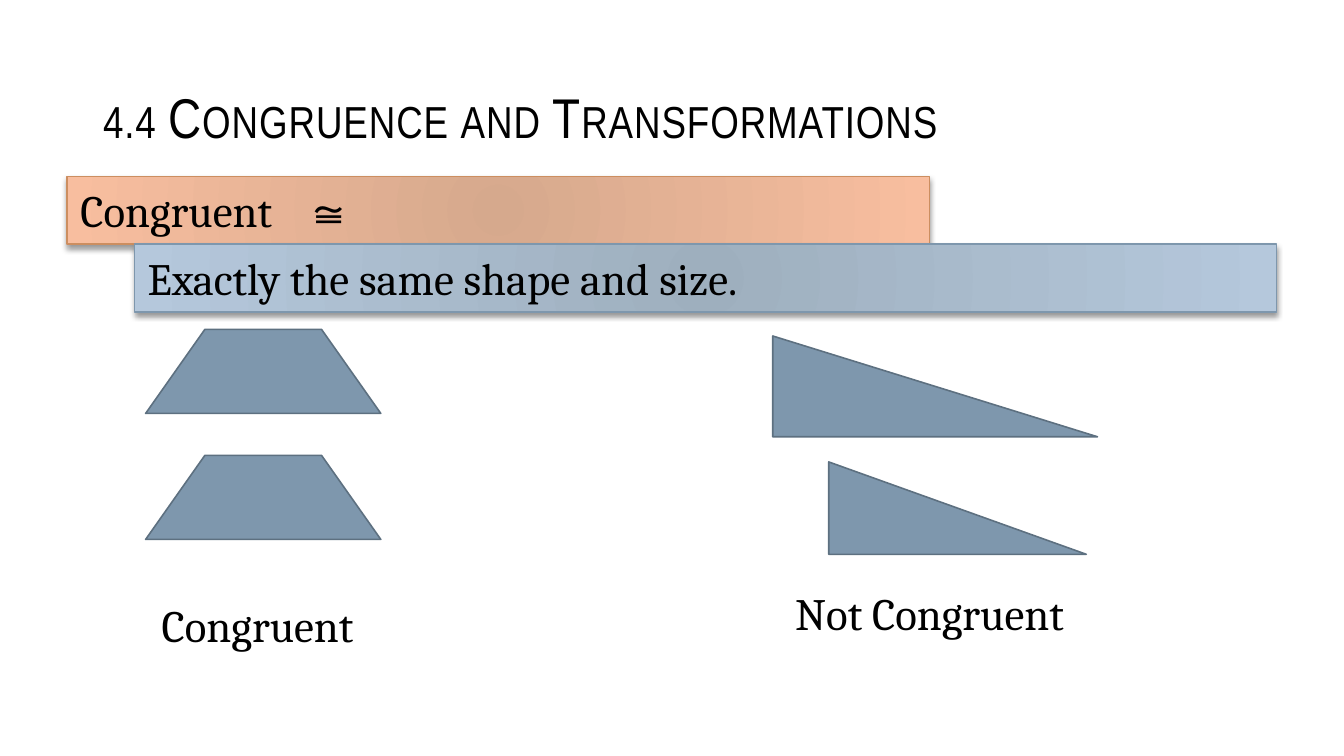
"""Build a slide that defines congruence with matching and non-matching shapes."""
from lxml import etree
from pptx import Presentation
from pptx.dml.color import RGBColor
from pptx.enum.shapes import MSO_SHAPE
from pptx.enum.text import MSO_ANCHOR, MSO_AUTO_SIZE, PP_ALIGN
from pptx.oxml.ns import qn
from pptx.util import Pt

RECTANGLE = MSO_SHAPE.RECTANGLE
TRAPEZOID = MSO_SHAPE.TRAPEZOID
TRIANGLE = MSO_SHAPE.RIGHT_TRIANGLE
LEFT, CENTER = PP_ALIGN.LEFT, PP_ALIGN.CENTER
TOP, MIDDLE, BOTTOM = MSO_ANCHOR.TOP, MSO_ANCHOR.MIDDLE, MSO_ANCHOR.BOTTOM
NO_FIT, GROW = MSO_AUTO_SIZE.NONE, MSO_AUTO_SIZE.SHAPE_TO_FIT_TEXT

BLACK = RGBColor(0x00, 0x00, 0x00)
STEEL = RGBColor(0x7E, 0x97, 0xAD)
SLATE = RGBColor(0x5D, 0x70, 0x80)
COPPER = RGBColor(0xCC, 0x8E, 0x60)
CLAY, PEACH = RGBColor(0xD6, 0xA9, 0x8D), RGBColor(0xF8, 0xBE, 0x9F)
GREY_BLUE, PALE_BLUE = RGBColor(0x9E, 0xAF, 0xBE), RGBColor(0xB5, 0xC8, 0xDC)

TITLE = "4.4 Congruence and Transformations"
TITLE_AREA = (48, 16.8, 624, 67.2)
BANNERS = [
    ("Congruent\t≅", (36, 94.5, 462, 36.35), (CLAY, PEACH), COPPER),
    ("Exactly the same shape and size.", (72, 130.8, 612, 36.35),
     (GREY_BLUE, PALE_BLUE), STEEL),
]
SYMBOL_TAB = 121
FIGURES = [
    (TRAPEZOID, (78, 176.5, 126, 45)),
    (TRAPEZOID, (78, 244, 126, 45)),
    (TRIANGLE, (414, 180, 174, 54)),
    (TRIANGLE, (444, 247.5, 138, 49.5)),
]
TRAPEZOID_SLANT = 0.705
CAPTIONS = [
    ("Congruent", (42, 316.5, 192, 36.35)),
    ("Not Congruent", (402, 310.2, 192, 36.35)),
]


def points(area):
    return [Pt(length) for length in area]


def write(frame, text, align, anchor, fit=GROW, font="Cambria", size=24):
    frame.word_wrap = True
    frame.auto_size = fit
    frame.vertical_anchor = anchor
    para = frame.paragraphs[0]
    para.alignment = align
    span = para.add_run()
    span.text = text
    span.font.name = font
    span.font.size = Pt(size)
    span.font.color.rgb = BLACK
    return para, span


def add_figure(slide, kind, area, line_color, line_width):
    shape = slide.shapes.add_shape(kind, *points(area))
    shape.shadow.inherit = False
    shape.line.color.rgb = line_color
    shape.line.width = Pt(line_width)
    return shape


def add_title(slide):
    title = slide.shapes.title
    title.left, title.top, title.width, title.height = points(TITLE_AREA)
    span = write(title.text_frame, TITLE, LEFT, BOTTOM, NO_FIT, "Arial Narrow", 30)[1]
    properties = span.font._element
    properties.set("cap", "small")
    properties.set("spc", "50")


def add_banner(slide, text, area, colors, line_color):
    banner = add_figure(slide, RECTANGLE, area, line_color, 0.75)
    banner.fill.gradient()
    for stop, color in zip(banner.fill.gradient_stops, colors):
        stop.color.rgb = color
    properties = banner._element.spPr
    gradient = properties.find(qn("a:gradFill"))
    gradient.remove(gradient.find(qn("a:lin")))
    circle = etree.SubElement(gradient, qn("a:path"), path="circle")
    etree.SubElement(circle, qn("a:fillToRect"),
                     {side: "100000" for side in "ltrb"})
    shadow = etree.SubElement(
        properties.find(qn("a:effectLst")), qn("a:outerShdw"),
        blurRad=str(Pt(3)), dist=str(Pt(2)), dir="5400000", rotWithShape="0")
    black = etree.SubElement(shadow, qn("a:srgbClr"), val=str(BLACK))
    etree.SubElement(black, qn("a:alpha"), val="40000")
    para = write(banner.text_frame, text, LEFT, TOP)[0]
    if "\t" in text:
        tabs = etree.SubElement(para._p.get_or_add_pPr(), qn("a:tabLst"))
        etree.SubElement(tabs, qn("a:tab"), pos=str(Pt(SYMBOL_TAB)), algn="l")


def main():
    deck = Presentation()
    deck.slide_width, deck.slide_height = Pt(720), Pt(405)
    slide = deck.slides.add_slide(deck.slide_layouts[5])
    add_title(slide)
    for banner in BANNERS:
        add_banner(slide, *banner)
    for kind, area in FIGURES:
        figure = add_figure(slide, kind, area, SLATE, 0.85)
        figure.fill.solid()
        figure.fill.fore_color.rgb = STEEL
        if kind == TRAPEZOID:
            figure.adjustments[0] = TRAPEZOID_SLANT
    for text, area in CAPTIONS:
        box = slide.shapes.add_textbox(*points(area))
        write(box.text_frame, text, CENTER, TOP)
    deck.save("out.pptx")


if __name__ == "__main__":
    main()
